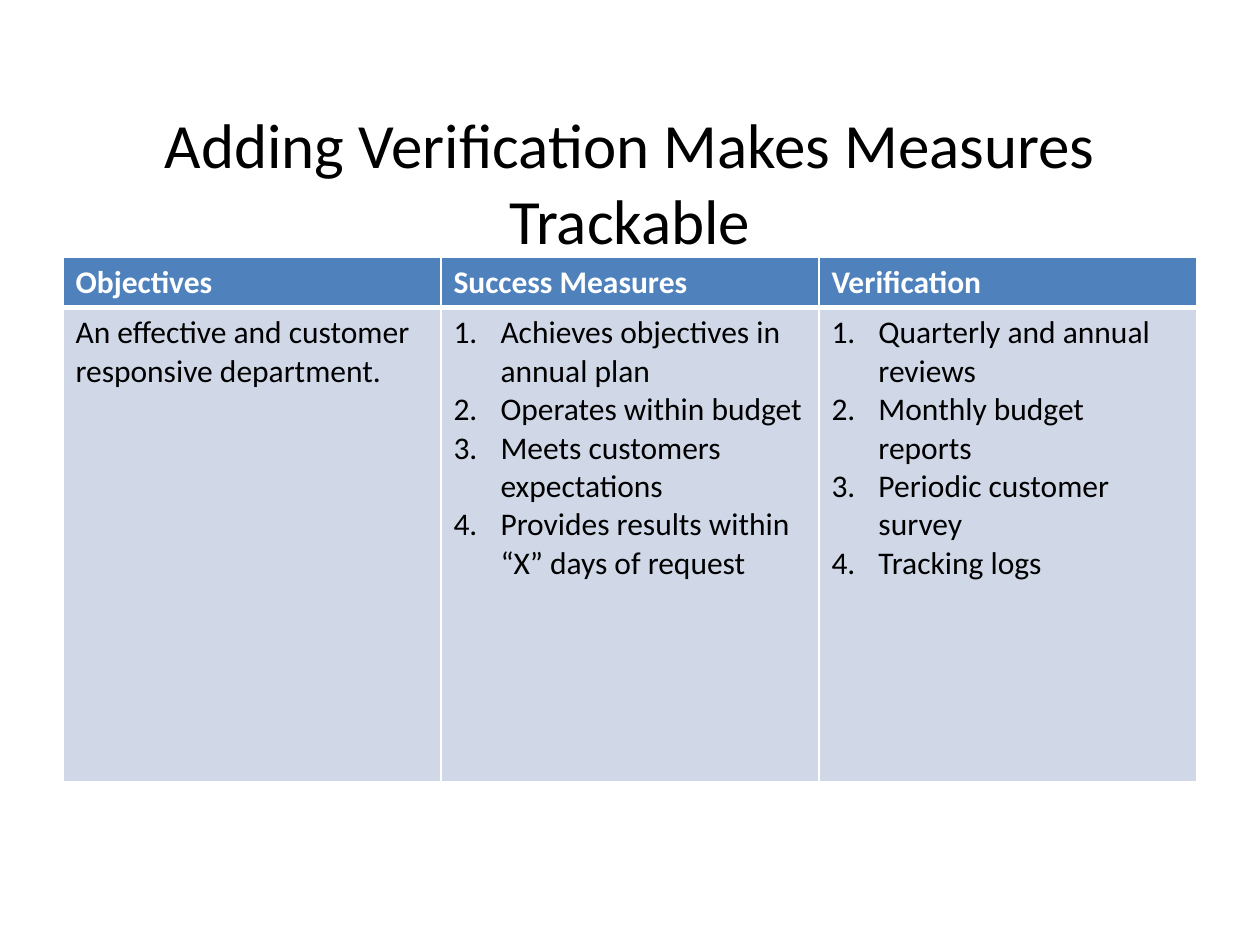
from dataclasses import dataclass

from lxml.etree import SubElement
from pptx import Presentation
from pptx.dml.color import RGBColor as RGB
from pptx.enum.text import MSO_ANCHOR as Anchor, PP_ALIGN as Align
from pptx.oxml.ns import qn
from pptx.util import Emu, Pt

EMU_PER_PX = 914400 // 126


@dataclass(frozen=True)
class Theme:
    font: str = "Calibri"
    title_size: int = 36
    table_size: int = 18
    text: str = "000000"
    white: str = "FFFFFF"
    header: str = "4F81BD"
    body: str = "D0D8E8"


THEME = Theme()

HEADERS = ["Objectives", "Success Measures", "Verification"]
OBJECTIVE = ["An effective and customer responsive department."]
MEASURES = [
    "Achieves objectives in annual plan",
    "Operates within budget",
    "Meets customers expectations",
    "Provides results within “X” days of request",
]
VERIFICATIONS = [
    "Quarterly and annual reviews",
    "Monthly budget reports",
    "Periodic customer survey",
    "Tracking logs",
]


def px(n):
    return Emu(n * EMU_PER_PX)


def add_run(p, text, size, color, bold=False):
    r = p.add_run()
    r.text = text
    r.font.name = THEME.font
    r.font.size = Pt(size)
    r.font.bold = bold
    r.font.color.rgb = RGB.from_string(color)


def number_paragraph(p):
    """Give a paragraph an automatic number and a hanging indent."""
    pPr = p._p.get_or_add_pPr()
    pPr.set("marL", str(px(47)))
    pPr.set("indent", str(-px(47)))
    SubElement(pPr, qn("a:buFont"), typeface="+mj-lt")
    SubElement(pPr, qn("a:buAutoNum"), type="arabicPeriod")


def set_borders(cell, bottom=1, top=1):
    """Draw white cell borders; widths are in points."""
    tcPr = cell._tc.get_or_add_tcPr()
    widths = {"lnL": 1, "lnR": 1, "lnT": top, "lnB": bottom}
    for i, (side, width) in enumerate(widths.items()):
        ln = tcPr.makeelement(qn(f"a:{side}"), {"w": str(Pt(width))})
        fill = SubElement(ln, qn("a:solidFill"))
        SubElement(fill, qn("a:srgbClr"), val=THEME.white)
        tcPr.insert(i, ln)


def fill_cell(cell, lines, fill, color, bold=False, numbered=False):
    cell.fill.solid()
    cell.fill.fore_color.rgb = RGB.from_string(fill)
    tf = cell.text_frame
    for i, line in enumerate(lines):
        p = tf.add_paragraph() if i else tf.paragraphs[0]
        if numbered:
            number_paragraph(p)
        add_run(p, line, THEME.table_size, color, bold)


def add_title(slide, text):
    sp = slide.shapes.add_textbox(px(63), px(96), px(1134), px(100))
    tf = sp.text_frame
    tf.word_wrap = True
    tf.vertical_anchor = Anchor.TOP
    tf.margin_top = px(10)
    p = tf.paragraphs[0]
    p.alignment = Align.CENTER
    add_run(p, text, THEME.title_size, THEME.text)


def add_measures_table(slide):
    heights = [50, 474]
    frame = slide.shapes.add_table(2, 3, px(63), px(257), px(1134), px(sum(heights)))
    table = frame.table
    for row, height in zip(table.rows, heights):
        row.height = px(height)

    # Header row
    for col, header in enumerate(HEADERS):
        cell = table.cell(0, col)
        fill_cell(cell, [header], THEME.header, THEME.white, bold=True)
        set_borders(cell, bottom=3)

    # Body row: plain objective, then numbered lists
    for col, lines in enumerate([OBJECTIVE, MEASURES, VERIFICATIONS]):
        cell = table.cell(1, col)
        fill_cell(cell, lines, THEME.body, THEME.text, numbered=len(lines) > 1)
        set_borders(cell, top=3)


def main():
    prs = Presentation()
    prs.slide_width, prs.slide_height = px(1260), px(945)
    slide = prs.slides.add_slide(prs.slide_layouts[6])
    add_title(slide, "Adding Verification Makes Measures Trackable")
    add_measures_table(slide)
    prs.save("out.pptx")


if __name__ == "__main__":
    main()
